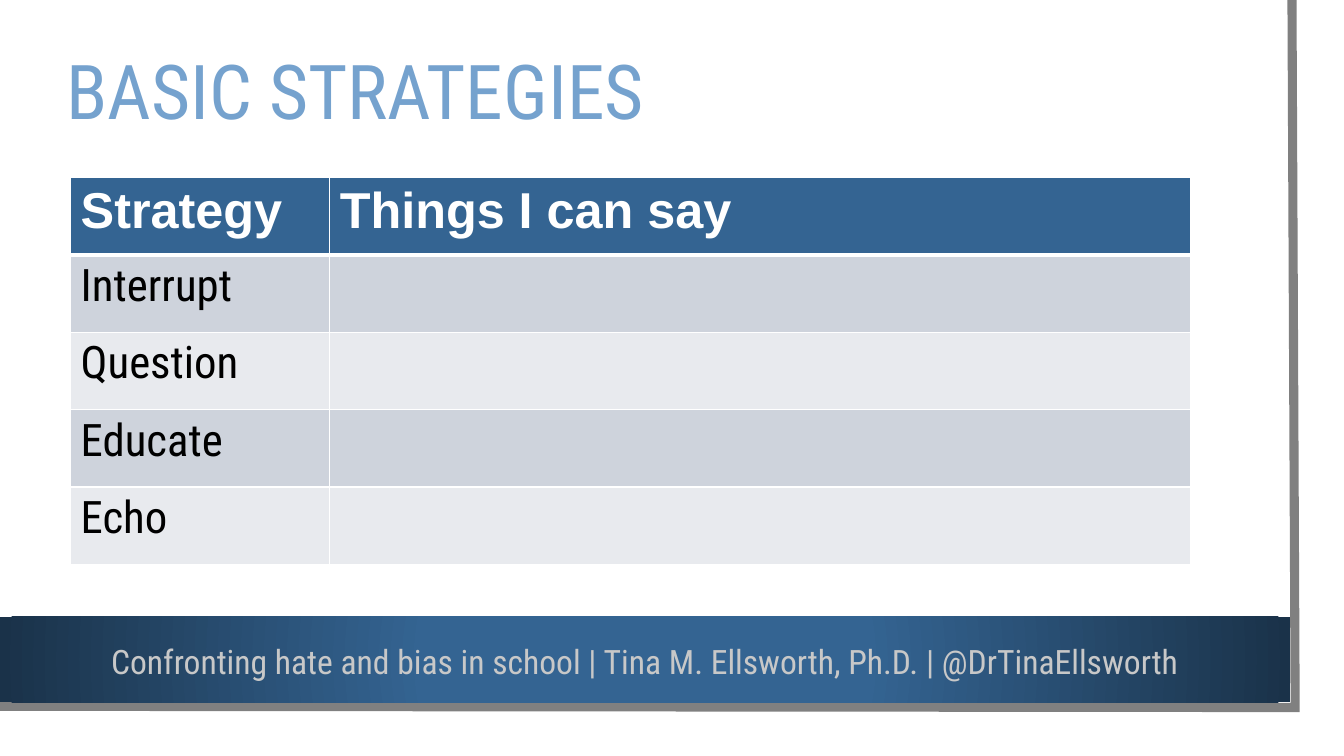
from lxml.etree import SubElement
from pptx import Presentation
from pptx.dml.color import RGBColor
from pptx.enum.shapes import MSO_SHAPE
from pptx.enum.text import MSO_ANCHOR, MSO_AUTO_SIZE, PP_ALIGN
from pptx.oxml import parse_xml
from pptx.oxml.ns import nsdecls, qn
from pptx.util import Cm, Pt

WHITE = RGBColor(0xFF, 0xFF, 0xFF)
BLACK = RGBColor(0x00, 0x00, 0x00)
GRAY = RGBColor(0x80, 0x80, 0x80)
PALE_GRAY = RGBColor(0xC8, 0xC8, 0xC8)
SKY = RGBColor(0x75, 0xA2, 0xCE)
BLUE = RGBColor(0x34, 0x64, 0x92)
NAVY = RGBColor(0x1A, 0x32, 0x49)
BAND_DARK = RGBColor(0xCE, 0xD3, 0xDC)
BAND_LIGHT = RGBColor(0xE8, 0xEA, 0xEE)

CONDENSED = "Roboto Condensed"
STRATEGIES = ["Interrupt", "Question", "Educate", "Echo"]
FOOTER = ("Confronting hate and bias in school | Tina M. Ellsworth, Ph.D. | "
          "@DrTinaEllsworth")


def add_run(p, text, size, color, font=CONDENSED, bold=False):
    r = p.add_run()
    r.text = text
    r.font.name = font
    r.font.size = Pt(size)
    r.font.bold = bold
    r.font.color.rgb = color


def add_page_edge(slide, right, bottom):
    """Draw the thick gray line down the right and along the bottom."""
    builder = slide.shapes.build_freeform(right - Cm(0.08), 0)
    builder.add_line_segments(
        [(right, bottom), (0, bottom - Cm(0.03))], close=False)
    sp = builder.convert_to_shape()
    sp.shadow.inherit = False
    sp.fill.background()
    sp.line.color.rgb = GRAY
    sp.line.width = Pt(6.5)
    SubElement(sp.line._get_or_add_ln(), qn("a:miter"), lim="800000")


def add_footer(slide, left, top, width, height):
    band = slide.shapes.add_shape(MSO_SHAPE.RECTANGLE, left, top, width, height)
    band.shadow.inherit = False
    band.line.fill.background()
    band.fill.gradient()
    stops = band.fill.gradient_stops
    for stop, position, color in zip(stops, (0.34, 1), (BLUE, NAVY)):
        stop.position = position
        stop.color.rgb = color
    grad = band._element.spPr.find(qn("a:gradFill"))
    linear = grad.find(qn("a:lin"))
    grad.replace(linear, parse_xml(
        f'<a:path {nsdecls("a")} path="circle">'
        '<a:fillToRect l="50000" t="50000" r="50000" b="50000"/></a:path>'))

    box = slide.shapes.add_textbox(left, top + Cm(0.48), width, Cm(1.28))
    tf = box.text_frame
    tf.word_wrap = True
    p = tf.paragraphs[0]
    p.alignment = PP_ALIGN.CENTER
    add_run(p, FOOTER, 24, PALE_GRAY)


def add_title(slide, left, top, width, height):
    title = slide.shapes.title
    title.left, title.top, title.width, title.height = left, top, width, height
    tf = title.text_frame
    tf.auto_size = MSO_AUTO_SIZE.NONE
    tf.vertical_anchor = MSO_ANCHOR.MIDDLE
    p = tf.paragraphs[0]
    p.alignment = PP_ALIGN.LEFT
    p.line_spacing = 0.9
    add_run(p, "BASIC STRATEGIES", 54, SKY)


def set_borders(cell, top, bottom):
    """Give the cell white borders, 1 pt at the sides."""
    tcPr = cell._tc.get_or_add_tcPr()
    sides = {"lnL": 1, "lnR": 1, "lnT": top, "lnB": bottom}
    for i, (tag, width) in enumerate(sides.items()):
        tcPr.insert(i, parse_xml(
            f'<a:{tag} {nsdecls("a")} w="{Pt(width)}"><a:solidFill>'
            f'<a:srgbClr val="{WHITE}"/></a:solidFill></a:{tag}>'))


def add_strategy_table(slide, left, top, width, height):
    rows = [("Strategy", "Things I can say")]
    rows += [(strategy, "") for strategy in STRATEGIES]
    frame = slide.shapes.add_table(len(rows), 2, left, top, width, height)
    table = frame.table
    table.columns[0].width = Cm(6.53)
    table.columns[1].width = width - Cm(6.53)
    for i, row in enumerate(rows):
        for j, text in enumerate(row):
            cell = table.cell(i, j)
            cell.fill.solid()
            p = cell.text_frame.paragraphs[0]
            if i == 0:
                cell.fill.fore_color.rgb = BLUE
                add_run(p, text, 36, WHITE, "Arial", bold=True)
            else:
                cell.fill.fore_color.rgb = BAND_DARK if i % 2 else BAND_LIGHT
                if text:
                    add_run(p, text, 32, BLACK)
            set_borders(cell, 3 if i == 1 else 1, 3 if i == 0 else 1)


def main():
    prs = Presentation()
    prs.slide_width, prs.slide_height = Cm(33.87), Cm(19.05)
    slide = prs.slides.add_slide(prs.slide_layouts[5])
    add_page_edge(slide, Cm(32.64), Cm(17.83))
    add_footer(slide, 0, Cm(15.54), Cm(32.51), Cm(2.16))
    add_title(slide, Cm(1.42), Cm(-0.91), Cm(30.63), Cm(6.6))
    add_strategy_table(slide, Cm(1.78), Cm(4.47), Cm(28.22), Cm(9.75))
    prs.save("out.pptx")


if __name__ == "__main__":
    main()
